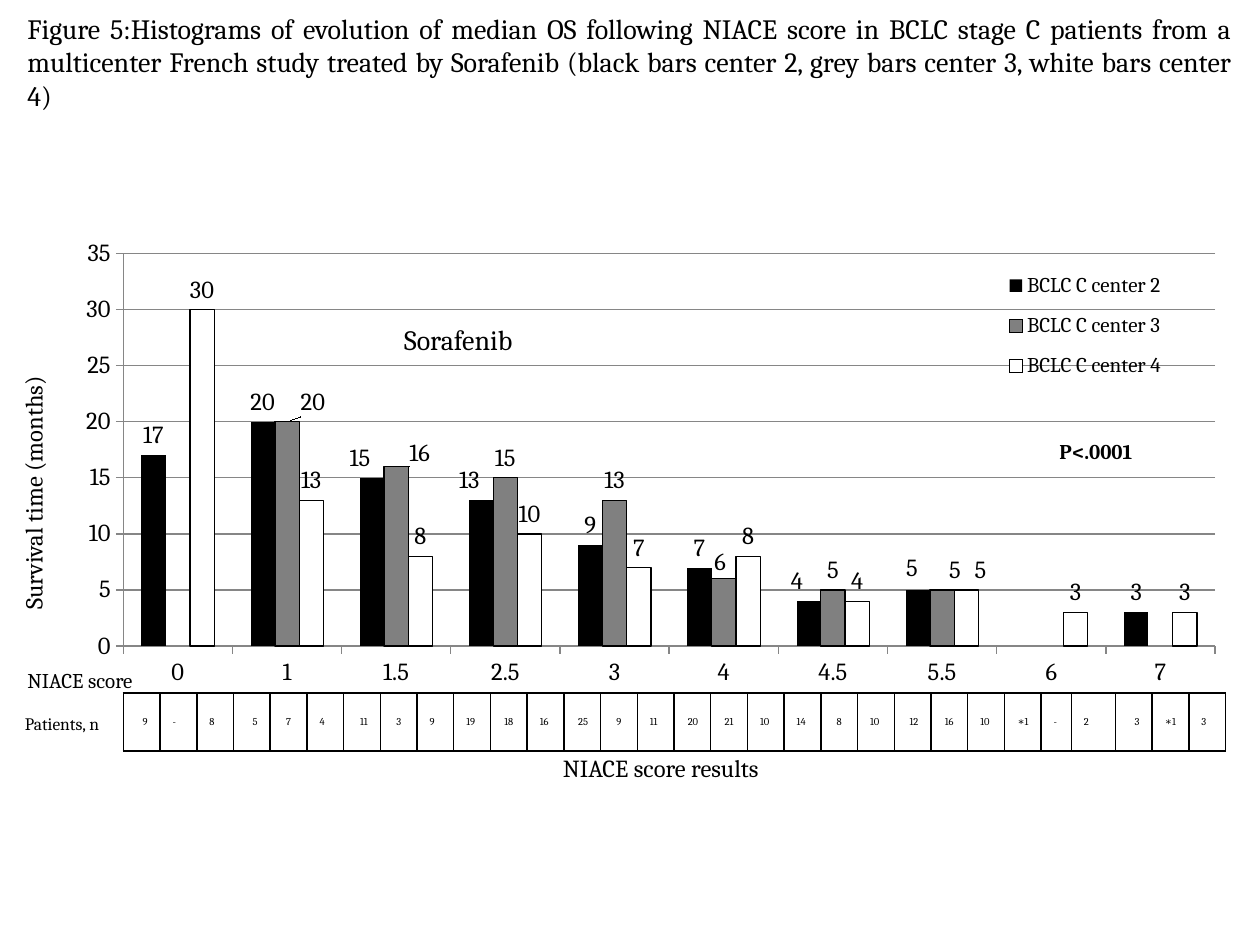
import pptx
import pptx.chart.data
import pptx.dml.color
import pptx.enum.chart
import pptx.enum.text
import pptx.oxml
import pptx.oxml.ns
import pptx.util

Pt = pptx.util.Pt
ALIGN = pptx.enum.text.PP_ALIGN
ALIGNS = {"l": ALIGN.LEFT, "c": ALIGN.CENTER, "r": ALIGN.RIGHT, "j": ALIGN.JUSTIFY}
FONT, BLACK, WHITE, GREY, RULE = "Cambria", "000000", "FFFFFF", "808080", "868686"

# Content
TITLE = ("Figure 5:Histograms of evolution of median OS following NIACE score in BCLC "
         "stage C patients from a multicenter French study treated by Sorafenib "
         "(black bars center 2, grey bars center 3, white bars center 4)")
SCORES = ["0", "1", "1.5", "2.5", "3", "4", "4.5", "5.5", "6", "7"]
# name, fill, values, {point: label shift as a share of the chart}
SERIES = [
    ("BCLC C center 2", BLACK, [17, 20, 15, 13, 9, 7, 4, 5, None, 3],
     {2: (-0.01, 0), 3: (-0.01, 0), 6: (-0.01, 0), 7: (-0.005, -0.005)}),
    ("BCLC C center 3", GREY, [None, 20, 16, 15, 13, 6, 5, 5, None, None],
     {1: (0.022, 0), 2: (0.02, 0.013), 5: (-0.003, 0.007), 7: (0.011, 0)}),
    ("BCLC C center 4", WHITE, [30, 13, 8, 10, 7, 8, 4, 5, 3, 3], {7: (0.012, 0)}),
]
# patients in centers 2, 3 and 4 for each score, with the alignment of the three cells
PATIENTS = [
    ("9 - 8", "rll"), ("5 7 4", "rcl"), ("11 3 9", "rcl"), ("19 18 16", "lcl"),
    ("25 9 11", "rcl"), ("20 21 10", "rcl"), ("14 8 10", "lcl"), ("12 16 10", "rcl"),
    ("∗1 - 2", "rll"), ("3 ∗1 3", "rcl"),
]
# text, (left, top, width, height), format
LABELS = [
    ("Survival time (months)", (-102.2, 221.8, 242.6, 24.5), dict(size=14, rotation=270)),
    ("NIACE score results", (314.6, 427, 141.8, 24.5), dict(size=14, wrap=False)),
    ("Patients, n", (7.2, 403.9, 62.6, 19.4), dict(size=10)),
    ("NIACE score", (8.6, 378, 85, 21.6), dict(size=12, wrap=False)),
    ("Sorafenib", (223.9, 180.7, 198.7, 26.6), dict(size=16)),
    ("P<.0001", (598.3, 247, 56.9, 21.6), dict(size=12, bold=True, wrap=False)),
    (TITLE, (8.6, 2.9, 702.7, 65.5), dict(size=16, align="j")),
]
CHART_BOX = (36.7, 133.9, 674.6, 262.1)
TABLE_LEFT, TABLE_TOP, COL_W, ROW_H = 70.5, 396, 21, 33.1
ODD_COLS = {25: 16.8, 26: 25.2}


def rgb(value):
    return pptx.dml.color.RGBColor.from_string(value)


def set_font(font, size, color=BLACK, bold=False):
    font.name, font.size, font.bold = FONT, Pt(size), bold
    font.color.rgb = rgb(color)


def write(tf, text, size=14, align="l", bold=False):
    p = tf.paragraphs[0]
    p.alignment = ALIGNS[align]
    r = p.add_run()
    r.text = text
    set_font(r.font, size, bold=bold)


def add_label(slide, text, box, rotation=0, wrap=True, **fmt):
    sp = slide.shapes.add_textbox(*map(Pt, box))
    sp.rotation = rotation
    sp.text_frame.word_wrap = wrap
    write(sp.text_frame, text, **fmt)


def set_line(line, color, width=0.75):
    line.color.rgb = rgb(color)
    line.width = Pt(width)


def layout_xml(**values):
    parts = "".join(f'<c:{tag} val="{val}"/>' for tag, val in values.items())
    return pptx.oxml.parse_xml(
        f'<c:layout {pptx.oxml.ns.nsdecls("c")}><c:manualLayout>{parts}'
        "</c:manualLayout></c:layout>")


def place(element, before, **values):
    """Give a chart part a manual layout, ahead of the named child."""
    for old in element.findall(pptx.oxml.ns.qn("c:layout")):
        element.remove(old)
    element.find(pptx.oxml.ns.qn(before)).addprevious(layout_xml(**values))


def add_chart(slide):
    data = pptx.chart.data.CategoryChartData()
    data.categories = SCORES
    for name, _, values, _ in SERIES:
        data.add_series(name, values)
    chart = slide.shapes.add_chart(
        pptx.enum.chart.XL_CHART_TYPE.COLUMN_CLUSTERED, *map(Pt, CHART_BOX), data).chart
    chart.has_title = False
    set_font(chart.font, 14)

    # Axes
    for axis in (chart.category_axis, chart.value_axis):
        set_font(axis.tick_labels.font, 14)
        axis.major_tick_mark = pptx.enum.chart.XL_TICK_MARK.OUTSIDE
        set_line(axis.format.line, RULE)
    axis.minimum_scale, axis.maximum_scale, axis.major_unit = 0, 35, 5
    axis.has_major_gridlines = True
    set_line(axis.major_gridlines.format.line, RULE)

    # Bars and their labels
    plot = chart.plots[0]
    plot.gap_width, plot.overlap, plot.vary_by_categories = 150, 0, False
    outside = pptx.enum.chart.XL_LABEL_POSITION.OUTSIDE_END
    for series, (_, color, _, shifts) in zip(plot.series, SERIES):
        series.invert_if_negative = False
        series.format.fill.solid()
        series.format.fill.fore_color.rgb = rgb(color)
        if color == BLACK:
            series.format.line.fill.background()
        else:
            set_line(series.format.line, BLACK)
        labels = series.data_labels
        labels.show_value, labels.position = True, outside
        set_font(labels.font, 14)
        for i in shifts:
            label = series.points[i].data_label
            label.position = outside
            set_font(label.font, 14)
        for dlbl in series._element.iter(pptx.oxml.ns.qn("c:dLbl")):
            x, y = shifts[int(dlbl.find(pptx.oxml.ns.qn("c:idx")).get("val"))]
            dlbl[0].addnext(layout_xml(x=x, y=y))

    # Legend and plot area
    chart.has_legend = True
    legend = chart.legend
    legend.position = pptx.enum.chart.XL_LEGEND_POSITION.RIGHT
    legend.include_in_layout = False
    set_font(legend.font, 12)
    place(legend._element, "c:overlay", xMode="edge", yMode="edge",
          x=0.79, y=0.05, w=0.15, h=0.3)
    place(plot._element.getparent(), "c:barChart", layoutTarget="inner",
          xMode="edge", yMode="edge", x=0.05, y=0.042, w=0.925, h=0.856)


def add_borders(cell):
    tc_pr = cell._tc.get_or_add_tcPr()
    for side in "LRTB":
        tc_pr.append(pptx.oxml.parse_xml(
            f'<a:ln{side} {pptx.oxml.ns.nsdecls("a")} w="{Pt(1)}"><a:solidFill>'
            f'<a:srgbClr val="{BLACK}"/></a:solidFill></a:ln{side}>'))


def add_patient_table(slide):
    cells = [pair for counts, aligns in PATIENTS for pair in zip(counts.split(), aligns)]
    table = slide.shapes.add_table(1, len(cells), Pt(TABLE_LEFT), Pt(TABLE_TOP),
                                   Pt(COL_W * len(cells)), Pt(ROW_H)).table
    table.first_row = table.horz_banding = False
    for i, (count, align) in enumerate(cells):
        table.columns[i].width = Pt(ODD_COLS.get(i, COL_W))
        cell = table.cell(0, i)
        cell.vertical_anchor = pptx.enum.text.MSO_ANCHOR.MIDDLE
        add_borders(cell)
        cell.fill.solid()
        cell.fill.fore_color.rgb = rgb(WHITE)
        write(cell.text_frame, count, size=6, align=align)


def main():
    prs = pptx.Presentation()
    prs.slide_width, prs.slide_height = Pt(720), Pt(540)
    slide = prs.slides.add_slide(prs.slide_layouts[6])
    add_chart(slide)
    add_patient_table(slide)
    for text, box, fmt in LABELS:
        add_label(slide, text, box, **fmt)
    prs.save("out.pptx")


if __name__ == "__main__":
    main()
